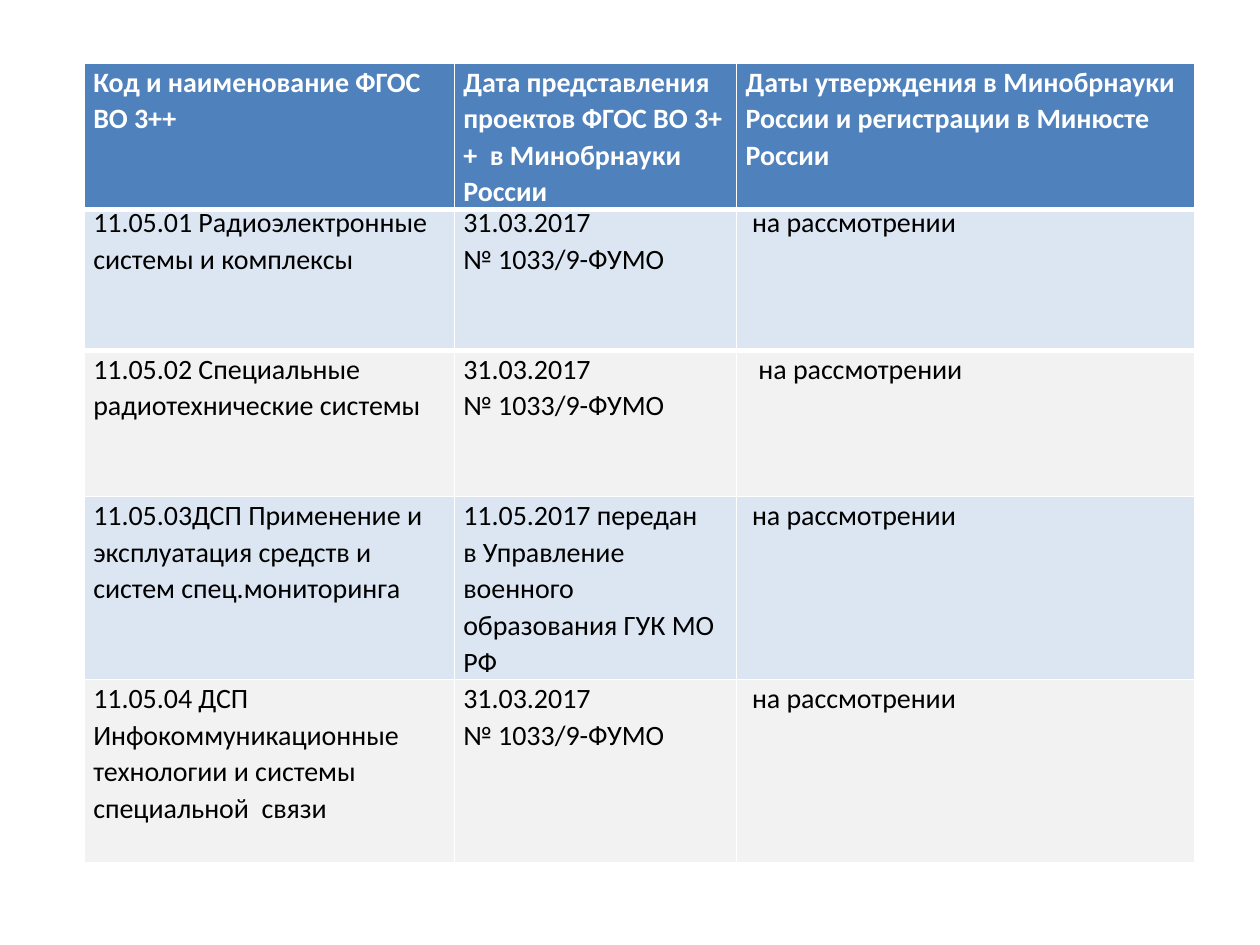
from lxml import etree
from pptx import Presentation
from pptx.dml.color import RGBColor
from pptx.oxml.ns import qn
from pptx.util import Cm, Pt

WHITE = RGBColor(0xFF, 0xFF, 0xFF)
BLACK = RGBColor(0x00, 0x00, 0x00)
BLUE = RGBColor(0x4F, 0x81, 0xBD)
PALE_BLUE = RGBColor(0xDC, 0xE6, 0xF2)
PALE_GREY = RGBColor(0xF2, 0xF2, 0xF2)

LEFT = 1.7
COLUMN_WIDTHS = [7.46, 5.69, 9.24]
HEADER_TOP = 1.27
BODY_TOP = 4.11
SHORT_ROW = 2.95
TALL_ROW = 3.69
SUBMITTED = ["31.03.2017", "№ 1033/9-ФУМО"]
PENDING = ["на рассмотрении"]

HEADER = [
    ["Код и наименование ФГОС ВО 3++"],
    ["Дата представления", "проектов ФГОС ВО 3++  в Минобрнауки России"],
    ["Даты утверждения в Минобрнауки России и регистрации в Минюсте России"],
]
STANDARDS = [
    [["11.05.01 Радиоэлектронные системы и комплексы"], SUBMITTED, PENDING],
    [["11.05.02 Специальные радиотехнические системы"], SUBMITTED, PENDING],
    [["11.05.03ДСП Применение и эксплуатация средств и систем спец.мониторинга"],
     ["11.05.2017 передан", "в Управление военного образования ГУК МО РФ"], PENDING],
    [["11.05.04 ДСП Инфокоммуникационные технологии и системы специальной  связи"],
     SUBMITTED, PENDING],
]
STATUS_INDENTS = [0.13, 0.26, 0.13, 0.13]


class SlideBuilder:
    font_name = "Calibri"
    font_size = Pt(16)
    line_spacing = 1.07
    side_margin = 0.18

    def __init__(self, slide):
        self.slide = slide

    def table(self, top, row_heights, rows):
        frame = self.slide.shapes.add_table(
            len(rows), len(COLUMN_WIDTHS), Cm(LEFT), Cm(top),
            Cm(sum(COLUMN_WIDTHS)), Cm(sum(row_heights)))
        table = frame.table
        table.first_row = False
        table.horz_banding = False
        for column, width in zip(table.columns, COLUMN_WIDTHS):
            column.width = Cm(width)
        for row, height in zip(table.rows, row_heights):
            row.height = Cm(height)
        return table

    def cell(self, cell, lines, fill, color, bold=False, indent=0, bottom=1):
        cell.margin_left = Cm(self.side_margin + indent)
        cell.margin_right = Cm(self.side_margin)
        cell.margin_top = cell.margin_bottom = 0
        self.borders(cell, bottom)
        cell.fill.solid()
        cell.fill.fore_color.rgb = fill
        box = cell.text_frame
        for number, line in enumerate(lines):
            para = box.add_paragraph() if number else box.paragraphs[0]
            para.line_spacing = self.line_spacing
            span = para.add_run()
            span.text = line
            span.font.name = self.font_name
            span.font.size = self.font_size
            span.font.bold = bold
            span.font.color.rgb = color

    def borders(self, cell, bottom):
        properties = cell._tc.get_or_add_tcPr()
        for side, width in (("L", 1), ("R", 1), ("T", 1), ("B", bottom)):
            line = etree.SubElement(properties, qn(f"a:ln{side}"), w=str(Pt(width)))
            fill = etree.SubElement(line, qn("a:solidFill"))
            etree.SubElement(fill, qn("a:srgbClr"), val=str(WHITE))


def main():
    deck = Presentation()
    deck.slide_width = Cm(25.4)
    deck.slide_height = Cm(19.05)
    page = SlideBuilder(deck.slides.add_slide(deck.slide_layouts[6]))

    body = page.table(BODY_TOP, [SHORT_ROW] * 2 + [TALL_ROW] * 2, STANDARDS)
    for row, standard in enumerate(STANDARDS):
        fill = PALE_GREY if row % 2 else PALE_BLUE
        bottom = 1 if row else 3
        for column, lines in enumerate(standard):
            indent = STATUS_INDENTS[row] if column == 2 else 0
            page.cell(body.cell(row, column), lines, fill, BLACK,
                      indent=indent, bottom=bottom)

    header = page.table(HEADER_TOP, [SHORT_ROW], [HEADER])
    for column, lines in enumerate(HEADER):
        page.cell(header.cell(0, column), lines, BLUE, WHITE, bold=True, bottom=3)

    deck.save("out.pptx")


if __name__ == "__main__":
    main()
